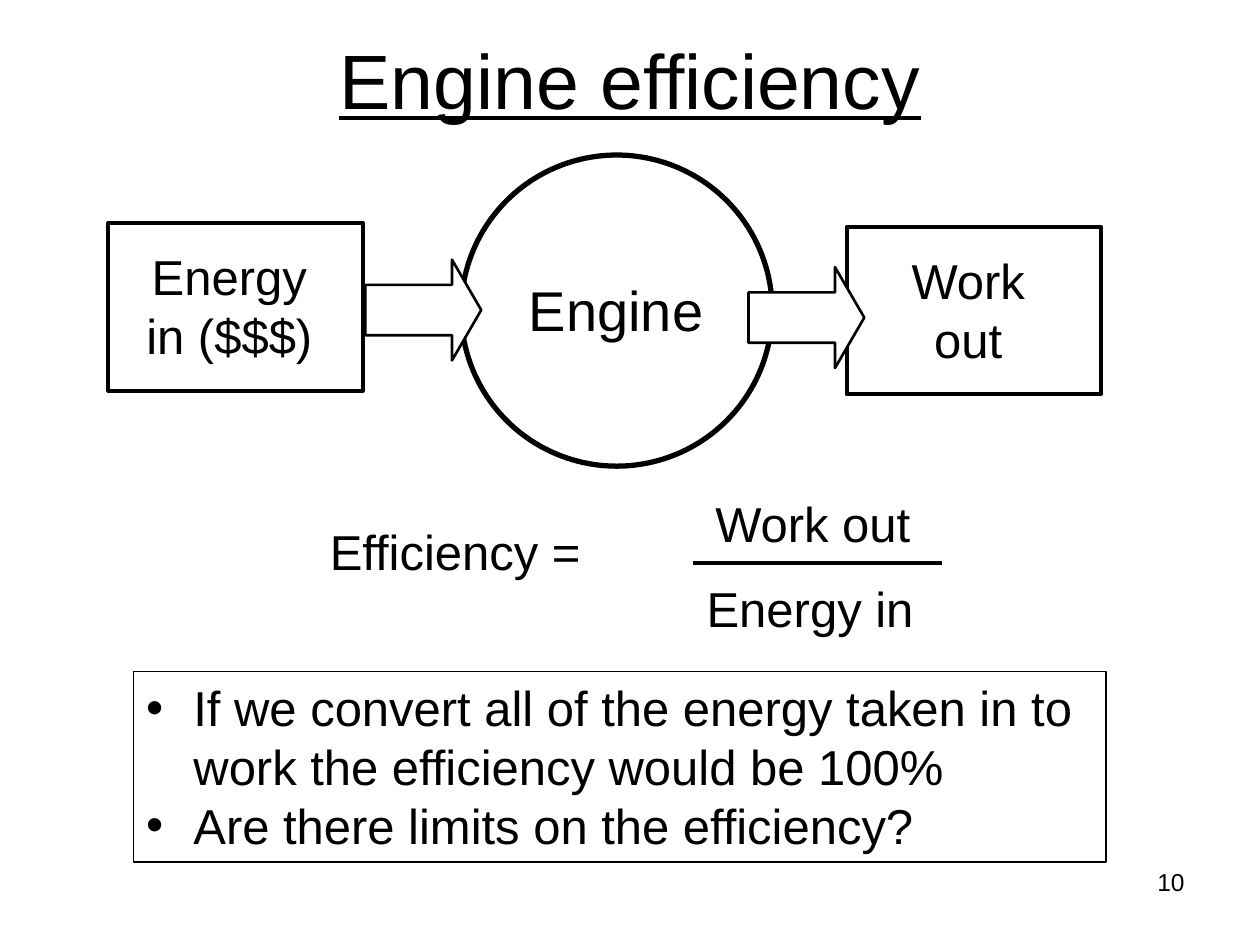
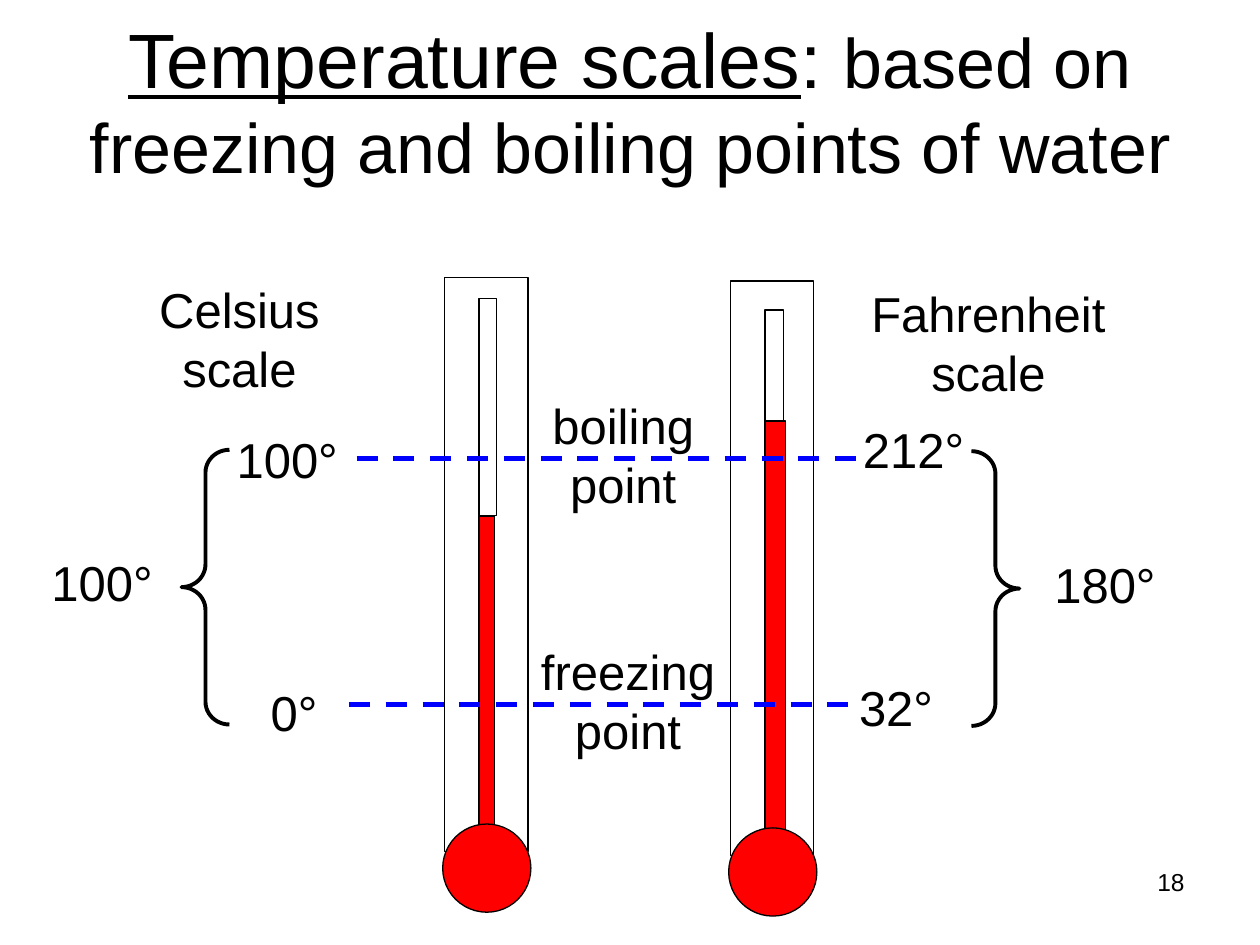
from pptx import Presentation
from pptx.dml.color import RGBColor
from pptx.enum.dml import MSO_LINE
from pptx.enum.shapes import MSO_CONNECTOR, MSO_SHAPE as SHAPE
from pptx.enum.text import MSO_ANCHOR as ANCHOR, MSO_AUTO_SIZE as FIT, PP_ALIGN as ALIGN
from pptx.oxml.xmlchemy import OxmlElement
from pptx.util import Pt

COLORS = {"ink": "000000", "paper": "FFFFFF", "mercury": "FF0000", "level": "0000FF"}
FONT = "Arial"
TEXT = 28
LINE_H = 41
TWO_LINES_H = 74.2


def color(name):
    return RGBColor.from_string(COLORS[name])


def place(sp, x, y, w, h):
    sp.left, sp.top, sp.width, sp.height = Pt(x), Pt(y), Pt(w), Pt(h)


def add_run(p, text, size=TEXT, underline=None):
    r = p.add_run()
    r.text = text
    r.font.name = FONT
    r.font.size = Pt(size)
    r.font.color.rgb = color("ink")
    r.font.underline = underline


def set_fill(sp, fill):
    if fill:
        sp.fill.solid()
        sp.fill.fore_color.rgb = color(fill)
    else:
        sp.fill.background()


def set_line(sp, weight, name="ink"):
    sp.line.color.rgb = color(name)
    sp.line.width = Pt(weight)


def add_shape(shapes, kind, x, y, w, h, weight, fill=None):
    sp = shapes.add_shape(kind, Pt(x), Pt(y), Pt(w), Pt(h))
    sp.shadow.inherit = False
    set_fill(sp, fill)
    set_line(sp, weight)
    return sp


def add_rule(shapes, x, y, w, weight, name="ink"):
    c = shapes.add_connector(MSO_CONNECTOR.STRAIGHT, Pt(x), Pt(y), Pt(x + w), Pt(y))
    c._element.spPr.append(OxmlElement("a:effectLst"))
    set_line(c, weight, name)
    return c


def add_label(shapes, x, y, w, lines, size=TEXT, fill=None):
    h = TWO_LINES_H if len(lines) > 1 else LINE_H * size / TEXT
    sp = shapes.add_textbox(Pt(x), Pt(y), Pt(w), Pt(h))
    set_fill(sp, fill)
    tf = sp.text_frame
    tf.word_wrap = False
    tf.auto_size = FIT.SHAPE_TO_FIT_TEXT
    for i, line in enumerate(lines):
        p = tf.add_paragraph() if i else tf.paragraphs[0]
        p.alignment = ALIGN.CENTER if len(lines) > 1 else ALIGN.LEFT
        add_run(p, line, size)


def add_title(s, h, runs):
    sp = s.shapes.title
    place(sp, 0, 0, 720, h)
    set_fill(sp, "paper")
    tf = sp.text_frame
    tf.auto_size = FIT.NONE
    tf.vertical_anchor = ANCHOR.MIDDLE
    p = tf.paragraphs[0]
    p.alignment = ALIGN.CENTER
    for text, size, underline in runs:
        add_run(p, text, size, underline)


def add_page_number(s, number):
    sp = s.shapes.add_textbox(Pt(516), Pt(492), Pt(168), Pt(37.5))
    sp.text_frame.word_wrap = True
    p = sp.text_frame.paragraphs[0]
    p.alignment = ALIGN.RIGHT
    add_run(p, number, 14)


def add_bullets(s, x, y, w, h, items):
    sp = s.placeholders[1]
    place(sp, x, y, w, h)
    set_fill(sp, "paper")
    set_line(sp, 0.75)
    tf = sp.text_frame
    tf.auto_size = FIT.NONE
    for i, item in enumerate(items):
        p = tf.add_paragraph() if i else tf.paragraphs[0]
        p.space_before = Pt(0)
        pPr = p._p.get_or_add_pPr()
        pPr.set("marL", str(Pt(27)))
        pPr.set("indent", str(-Pt(27)))
        bullet = OxmlElement("a:buChar")
        bullet.set("char", "•")
        pPr.append(bullet)
        add_run(p, item)


def add_engine_flow(s, x, y):
    shapes = s.shapes.add_group_shape().shapes
    add_shape(shapes, SHAPE.OVAL, x + 201.6, y, 177.8, 177.8, 3)
    add_label(shapes, x + 233.3, y + 65.5, 122, ["Engine"], 32)
    for dx, dy, inset, w, lines in [
        (0, 38.9, 14.4, 109.4, ["Energy", "in ($$$)"]),
        (421.9, 41, 29.5, 79.9, ["Work", "out"]),
    ]:
        add_shape(shapes, SHAPE.RECTANGLE, x + dx, y + dy, 145.4, 95.8, 2.25, "paper")
        add_label(shapes, x + dx + inset, y + dy + 10.1, w, lines, fill="paper")
    for dx, dy in [(146.9, 59.8), (365.8, 64.1)]:
        arrow = add_shape(shapes, SHAPE.RIGHT_ARROW, x + dx, y + dy, 66.2, 57.6, 1.5, "paper")
        arrow.adjustments[0] = 0.5
        arrow.adjustments[1] = 0.29


def add_efficiency_formula(s, x, y):
    shapes = s.shapes.add_group_shape().shapes
    add_label(shapes, x, y + 15.8, 170, ["Efficiency ="])
    add_label(shapes, x + 220.3, y, 130, ["Work out"])
    add_label(shapes, x + 215.3, y + 48.2, 137, ["Energy in"])
    add_rule(shapes, x + 214.6, y + 43.2, 142.5, 2.25)


def add_thermometer(s, x, y, tube_top, level, tube_w, mercury_w):
    shapes = s.shapes.add_group_shape().shapes
    tube_x = x + 19.5
    add_shape(shapes, SHAPE.RECTANGLE, x, y, 47.5, 328.3, 0.75)
    add_shape(shapes, SHAPE.RECTANGLE, tube_x, y + level, mercury_w, 326 - level, 0.75, "mercury")
    add_shape(shapes, SHAPE.RECTANGLE, tube_x, y + tube_top, tube_w, level - tube_top, 0.75)
    add_shape(shapes, SHAPE.OVAL, x - 1.2, y + 312.5, 50.4, 50.4, 0.75, "mercury")


def add_water_point(s, x, y, w, label_dx, label_w, lines):
    add_rule(s.shapes, x, y, w, 3, "level").line.dash_style = MSO_LINE.DASH
    add_label(s.shapes, x + label_dx, y - 39.6, label_w, lines)


def add_scale(s, x, y, labels, brace_at, rotation):
    for dx, dy, w, lines in labels:
        add_label(s.shapes, x + dx, y + dy, w, lines)
    dx, dy = brace_at
    brace = add_shape(s.shapes, SHAPE.RIGHT_BRACE, x + dx, y + dy, 27.4, 157, 2.25)
    brace.adjustments[0] = 0.475
    brace.rotation = rotation


def build_engine_slide(prs):
    s = prs.slides.add_slide(prs.slide_layouts[1])
    add_title(s, 90, [("Engine efficiency", 44, True)])
    add_engine_flow(s, 61.9, 88.6)
    add_efficiency_formula(s, 181.4, 278.6)
    add_bullets(s, 76.3, 383.8, 555.8, 108.7, [
        "If we convert all of the energy taken in to work the efficiency would be 100%",
        "Are there limits on the efficiency?",
    ])
    add_page_number(s, "10")


def build_temperature_slide(prs):
    s = prs.slides.add_slide(prs.slide_layouts[5])
    add_title(s, 113.8, [
        ("Temperature scales", 44, True),
        (": ", 44, False),
        ("based on freezing and boiling points of water", 40, False),
    ])
    add_thermometer(s, 254.2, 158.4, 12.2, 136.4, 10, 9)
    add_thermometer(s, 417.6, 160.6, 16.6, 80, 10.8, 11.8)
    add_water_point(s, 203.8, 262.1, 288, 104.4, 95.8, ["boiling", "point"])
    add_water_point(s, 199.4, 402.5, 285.1, 102.2, 114.5, ["freezing", "point"])
    add_scale(s, 22.3, 156.2, [
        (61.2, 0, 106.6, ["Celsius", "scale"]),
        (105.8, 85.7, 72.7, ["100°"]),
        (125.3, 230.4, 41, ["0°"]),
        (0, 156.2, 72.7, ["100°"]),
    ], (81.4, 100.8), 180)
    add_scale(s, 483.8, 158.4, [
        (6.5, 0, 149, ["Fahrenheit", "scale"]),
        (2.2, 77.8, 72.7, ["212°"]),
        (0, 225.4, 56.9, ["32°"]),
        (111.6, 154.8, 72.7, ["180°"]),
    ], (71.3, 99.4), 0)
    add_page_number(s, "18")


def main():
    prs = Presentation()
    prs.slide_width, prs.slide_height = Pt(720), Pt(540)
    build_engine_slide(prs)
    build_temperature_slide(prs)
    prs.save("out.pptx")


if __name__ == "__main__":
    main()
